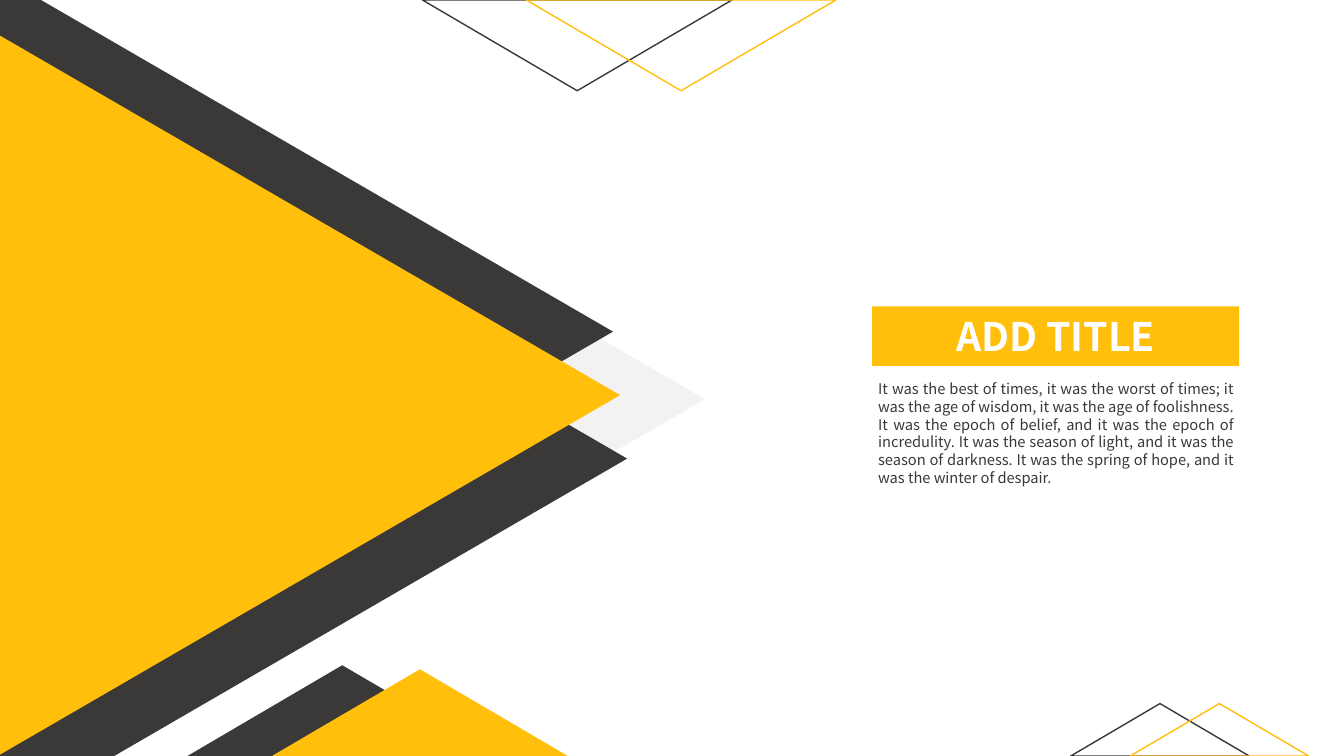
from dataclasses import dataclass

from lxml import etree
from pptx import Presentation
from pptx import util as u
from pptx.dml.color import RGBColor
from pptx.enum import shapes, text
from pptx.oxml.ns import qn


@dataclass(frozen=True)
class Theme:
    yellow: str = "FFBF0B"
    dark: str = "3B3838"
    pale: str = "F2F2F2"
    white: str = "FFFFFF"
    font: str = "Noto Sans CJK SC"
    title_size: float = 28
    body_size: float = 10.5
    body_leading: float = 12.6
    outline: float = 1


def set_format(target, values):
    for name, value in values.items():
        setattr(target, name, value)


class SlideBuilder:
    def __init__(self, page, theme):
        self.page = page
        self.theme = theme

    def triangle(self, left, top, width, height, fill=None, line=None, rotation=0):
        shape = self.page.shapes.add_shape(
            shapes.MSO_SHAPE.ISOSCELES_TRIANGLE,
            *(u.Inches(value) for value in (left, top, width, height)))
        shape.shadow.inherit = False
        shape.rotation = rotation
        if fill:
            shape.fill.solid()
            shape.fill.fore_color.rgb = RGBColor.from_string(fill)
        else:
            shape.fill.background()
        if line:
            shape.line.color.rgb = RGBColor.from_string(line)
            shape.line.width = u.Pt(self.theme.outline)
        else:
            shape.line.fill.background()

    def fill_box(self, box, place, words, size, color, bold, anchor, para_format):
        sides = ("left", "top", "width", "height")
        set_format(box, dict(zip(sides, map(u.Inches, place))))
        frame = box.text_frame
        set_format(frame, {"word_wrap": True, "auto_size": text.MSO_AUTO_SIZE.NONE,
                           "vertical_anchor": anchor})
        para = frame.paragraphs[0]
        set_format(para, {"space_before": u.Pt(0), **para_format})
        span = para.add_run()
        span.text = words
        set_format(span.font, {"name": self.theme.font, "size": u.Pt(size), "bold": bold})
        span.font.color.rgb = RGBColor.from_string(color)
        return para

    def title(self, place, words):
        box = self.page.shapes.title
        box.fill.solid()
        box.fill.fore_color.rgb = RGBColor.from_string(self.theme.yellow)
        self.fill_box(box, place, words, self.theme.title_size, self.theme.white, True,
                      text.MSO_ANCHOR.MIDDLE, {"alignment": text.PP_ALIGN.CENTER})

    def body(self, place, words):
        para = self.fill_box(
            self.page.placeholders[1], place, words,
            self.theme.body_size, self.theme.dark, False, text.MSO_ANCHOR.TOP,
            {"alignment": text.PP_ALIGN.JUSTIFY,
             "line_spacing": u.Pt(self.theme.body_leading)})
        # Plain paragraph: no bullet and no indent
        properties = para._p.get_or_add_pPr()
        properties.set("marL", "0")
        properties.set("indent", "0")
        etree.SubElement(properties, qn("a:buNone"))


def main():
    deck = Presentation()
    deck.slide_width, deck.slide_height = u.Inches(13.33), u.Inches(7.5)
    theme = Theme()
    slide = SlideBuilder(deck.slides.add_slide(deck.slide_layouts[1]), theme)

    # Large arrowheads on the left
    for left, top, color in ((-1.93, -0.17, theme.pale), (-2.84, -0.84, theme.dark),
                             (-2.7, 0.42, theme.dark), (-2.77, -0.21, theme.yellow)):
        slide.triangle(left, top, 9.58, 8.26, fill=color, rotation=90)

    # Solid peaks at the bottom
    for left, top, color in ((1.86, 6.6, theme.dark), (2.63, 6.64, theme.yellow)):
        slide.triangle(left, top, 3.07, 0.9, fill=color)

    # Outlined pairs: hanging from the top, standing at the bottom right
    for left, top, width, height, step, rotation in (
            (4.19, 0, 3.07, 0.9, 1.03, 180), (10.62, 6.98, 1.77, 0.52, 0.59, 0)):
        for index, color in enumerate((theme.dark, theme.yellow)):
            slide.triangle(left + index * step, top, width, height,
                           line=color, rotation=rotation)

    # Title and paragraph
    slide.title((8.65, 3.04, 3.64, 0.59), "ADD TITLE")
    slide.body((8.61, 3.72, 3.73, 1.16),
               "It was the best of times, it was the worst of times; it was the age of "
               "wisdom, it was the age of foolishness. It was the epoch of belief, and it "
               "was the epoch of incredulity. It was the season of light, and it was the "
               "season of darkness. It was the spring of hope, and it was the winter of "
               "despair.")

    deck.save("out.pptx")


if __name__ == "__main__":
    main()
